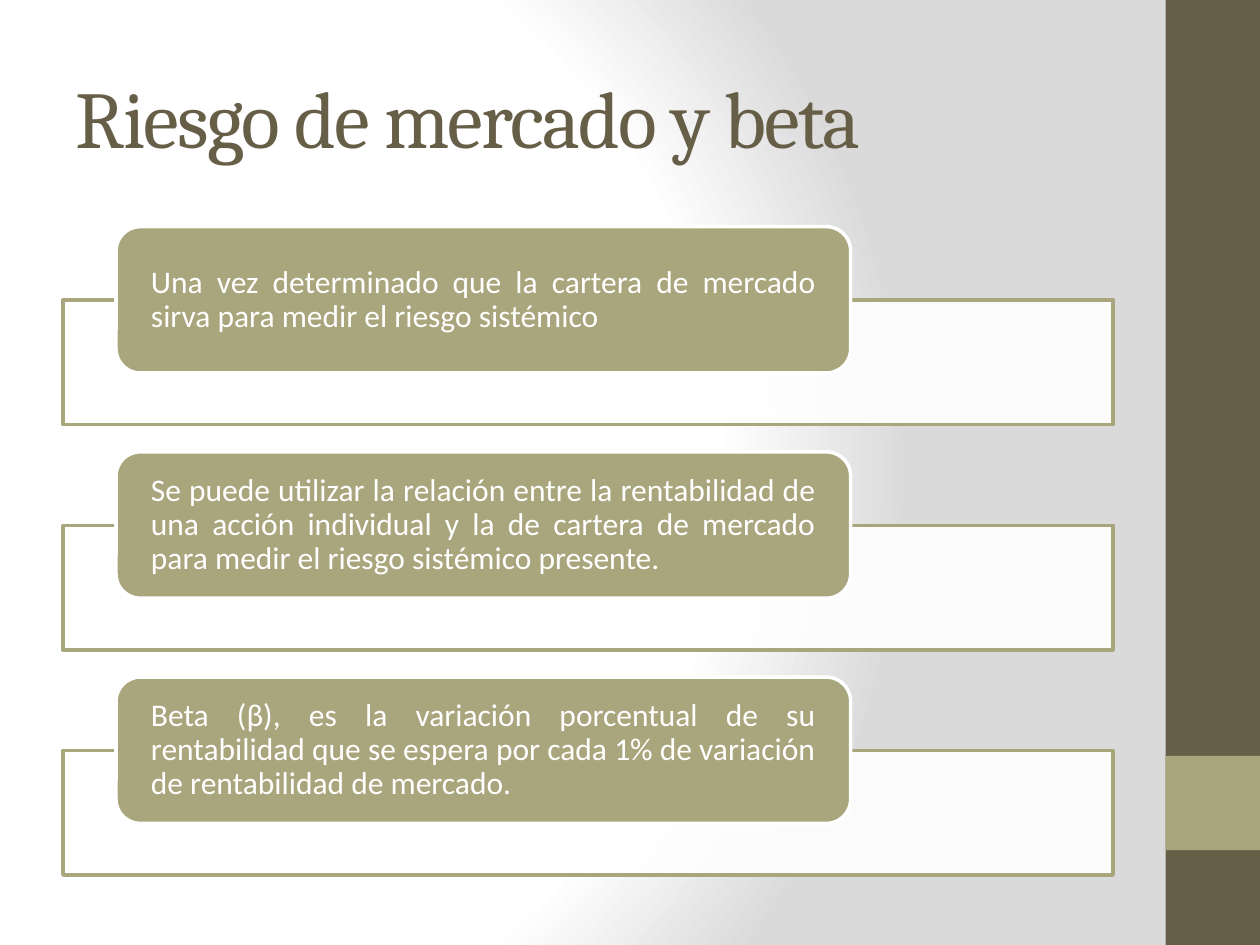
from lxml import etree
from pptx import Presentation
from pptx.dml.color import RGBColor
from pptx.enum.shapes import MSO_SHAPE
from pptx.enum.text import MSO_ANCHOR, PP_ALIGN
from pptx.oxml import parse_xml
from pptx.oxml.ns import nsdecls, qn
from pptx.util import Cm, Pt

RECT = MSO_SHAPE.RECTANGLE
ROUND = MSO_SHAPE.ROUNDED_RECTANGLE
MIDDLE = MSO_ANCHOR.MIDDLE
LEFT = PP_ALIGN.LEFT
JUSTIFY = PP_ALIGN.JUSTIFY

BROWN = RGBColor(0x67, 0x5E, 0x47)
OLIVE = RGBColor(0xA9, 0xA5, 0x7C)
WHITE = RGBColor(0xFF, 0xFF, 0xFF)
GREY = RGBColor(0xDA, 0xDA, 0xDA)

MARGIN = 1.27
WIDTH = 21.17
TOP = 4.57
PITCH = 4.54
POINTS = [
    "Una vez determinado que la cartera de mercado sirva para medir el riesgo sistémico",
    "Se puede utilizar la relación entre la rentabilidad de una acción individual "
    "y la de cartera de mercado para medir el riesgo sistémico presente.",
    "Beta (β), es la variación porcentual de su rentabilidad que se espera "
    "por cada 1% de variación de rentabilidad de mercado.",
]


def paint_back(slide):
    slide.background.fill.solid()
    stops = "".join(
        f'<a:gs pos="{pos * 1000}"><a:srgbClr val="{color}"/></a:gs>'
        for pos, color in [(0, WHITE), (75, WHITE), (100, GREY)]
    )
    grad = parse_xml(
        f'<a:gradFill {nsdecls("a")} rotWithShape="1"><a:gsLst>{stops}</a:gsLst>'
        '<a:path path="circle"><a:fillToRect l="20000" t="50000" r="100000" b="50000"/>'
        "</a:path></a:gradFill>"
    )
    back = slide.element.xpath(".//p:bgPr")[0]
    back.replace(back[0], grad)


def add_box(slide, kind, left, top, width, height, fill, line=None):
    box = slide.shapes.add_shape(kind, Cm(left), Cm(top), Cm(width), Cm(height))
    box.shadow.inherit = False
    box.fill.solid()
    box.fill.fore_color.rgb = fill
    if line is None:
        box.line.fill.background()
    else:
        box.line.color.rgb = line
        box.line.width = Pt(2)
    return box


def set_alpha(box, percent):
    color = box.element.spPr.find(qn("a:solidFill"))[0]
    etree.SubElement(color, qn("a:alpha"), val=str(percent * 1000))


def set_font(para, name, size, color):
    para.font.name = name
    para.font.size = Pt(size)
    para.font.color.rgb = color


def add_title(slide, text):
    title = slide.shapes.title
    title.left, title.top = Cm(MARGIN), Cm(0.76)
    title.width, title.height = Cm(WIDTH), Cm(3.18)
    frame = title.text_frame
    frame.text = text
    frame.vertical_anchor = MIDDLE
    para = frame.paragraphs[0]
    para.alignment = LEFT
    set_font(para, "Cambria", 46, BROWN)
    para.runs[0].font.element.set("spc", "-100") if hasattr(
        para.runs[0].font, "element"
    ) else para.runs[0]._r.get_or_add_rPr().set("spc", "-100")


def add_point(slide, top, text):
    panel = add_box(slide, RECT, MARGIN, top + 1.48, WIDTH, 2.51, WHITE, OLIVE)
    set_alpha(panel, 90)
    card = add_box(slide, ROUND, 2.34, top, 14.81, 2.95, OLIVE, WHITE)
    frame = card.text_frame
    frame.word_wrap = True
    frame.vertical_anchor = MIDDLE
    frame.margin_left = frame.margin_right = Cm(0.56)
    frame.margin_top = frame.margin_bottom = 0
    frame.text = text
    para = frame.paragraphs[0]
    para.alignment = JUSTIFY
    para.line_spacing = 0.9
    set_font(para, "Calibri", 18, WHITE)


def main():
    deck = Presentation()
    deck.slide_width, deck.slide_height = Cm(25.4), Cm(19.05)
    slide = deck.slides.add_slide(deck.slide_layouts[5])
    paint_back(slide)
    add_box(slide, RECT, 23.5, 0, 1.9, 19.05, BROWN)
    add_box(slide, RECT, 23.5, 15.24, 1.9, 1.9, OLIVE)
    add_title(slide, "Riesgo de mercado y beta")
    for row, text in enumerate(POINTS):
        add_point(slide, TOP + row * PITCH, text)
    deck.save("out.pptx")


if __name__ == "__main__":
    main()
